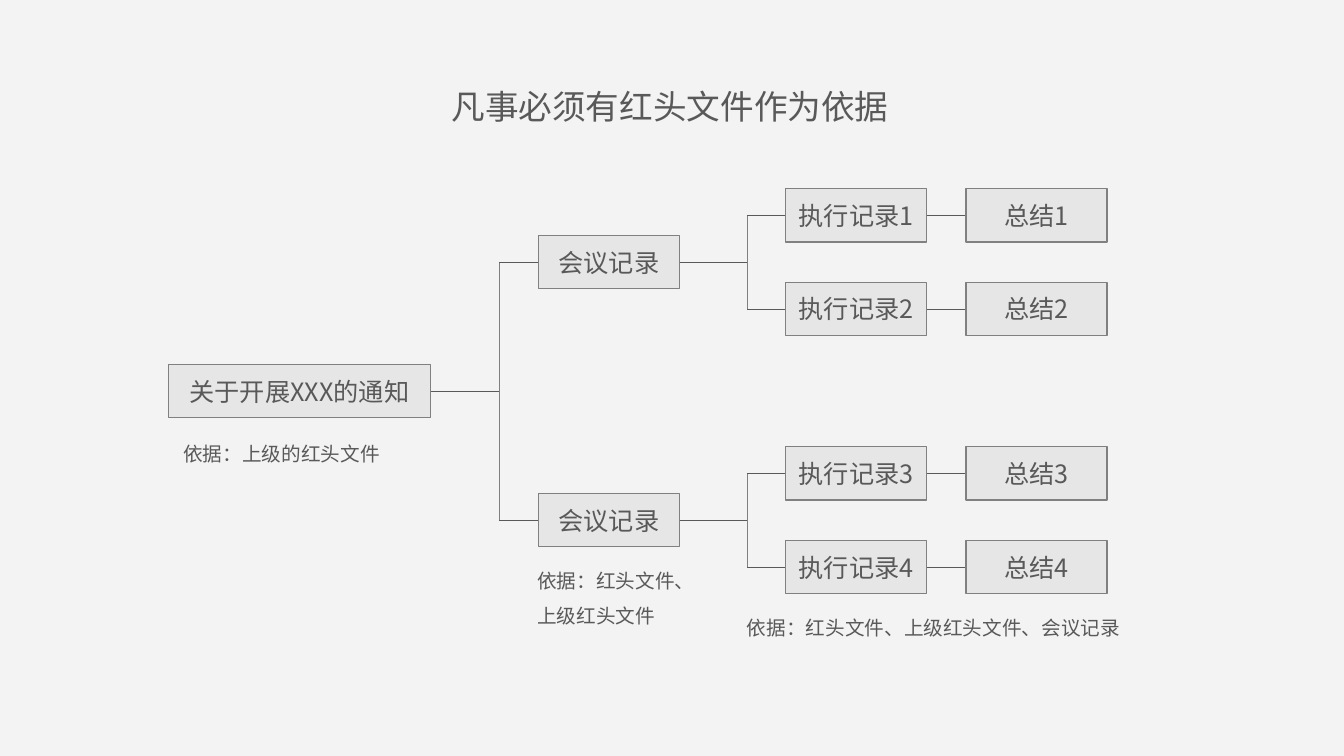
"""Build a slide with a document tree: notice, meetings, execution records, summaries."""
from lxml import etree
from pptx import Presentation
from pptx.dml.color import RGBColor
from pptx.enum.shapes import MSO_CONNECTOR, MSO_SHAPE
from pptx.enum.text import MSO_ANCHOR, PP_ALIGN
from pptx.oxml.ns import qn
from pptx.util import Inches, Pt

RECT, STRAIGHT = MSO_SHAPE.RECTANGLE, MSO_CONNECTOR.STRAIGHT
LEFT, CENTER, MIDDLE = PP_ALIGN.LEFT, PP_ALIGN.CENTER, MSO_ANCHOR.MIDDLE

THEME = {
    "font": "Noto Sans CJK SC",
    "title": 24, "box": 18, "note": 14,
    "bg": RGBColor.from_string("F3F3F3"),
    "fill": RGBColor.from_string("E7E6E6"),
    "border": RGBColor.from_string("808080"),
    "ink": RGBColor.from_string("595959"),
}

NOTICE_X, MEETING_X, RECORD_X, SUMMARY_X = 1.67, 5.34, 7.79, 9.58
TRUNK_X, BRANCH_X = 4.95, 7.41
NOTICE_W, BOX_W, BOX_H = 2.6, 1.4, 0.53
NOTICE_Y, MEETING_YS, SPREAD = 3.88, (2.6, 5.16), 0.465

prs = Presentation()
prs.slide_width, prs.slide_height = Inches(13.33), Inches(7.5)
s = prs.slides.add_slide(prs.slide_layouts[6])
s.background.fill.solid()
s.background.fill.fore_color.rgb = THEME["bg"]


def write(sp, text, size, align, spacing=1.0):
    tf = sp.text_frame
    tf.word_wrap = True
    p = tf.paragraphs[0]
    p.alignment, p.line_spacing = align, spacing
    r = p.add_run()
    r.text = text
    r.font.size = Pt(THEME[size])
    r.font.color.rgb = THEME["ink"]
    r.font.name = THEME["font"]
    etree.SubElement(r.font._element, qn("a:ea")).set("typeface", THEME["font"])


def line(x1, y1, x2, y2, color="ink"):
    c = s.shapes.add_connector(STRAIGHT, Inches(x1), Inches(y1), Inches(x2), Inches(y2))
    c.line.color.rgb = THEME[color]
    c.line.width = Pt(0.5)
    etree.SubElement(c._element.spPr, qn("a:effectLst"))


boxes = [("关于开展XXX的通知", NOTICE_X, NOTICE_Y, NOTICE_W)]
line(NOTICE_X + NOTICE_W, NOTICE_Y, TRUNK_X, NOTICE_Y)
line(TRUNK_X, MEETING_YS[0], TRUNK_X, MEETING_YS[1], "border")

for i, meeting_y in enumerate(MEETING_YS):
    boxes.append(("会议记录", MEETING_X, meeting_y, BOX_W))
    line(TRUNK_X, meeting_y, MEETING_X, meeting_y)
    line(MEETING_X + BOX_W, meeting_y, BRANCH_X, meeting_y)
    line(BRANCH_X, meeting_y - SPREAD, BRANCH_X, meeting_y + SPREAD, "border")
    for j, y in enumerate((meeting_y - SPREAD, meeting_y + SPREAD)):
        number = 2 * i + j + 1
        boxes.append((f"执行记录{number}", RECORD_X, y, BOX_W))
        boxes.append((f"总结{number}", SUMMARY_X, y, BOX_W))
        line(BRANCH_X, y, RECORD_X, y)
        line(RECORD_X + BOX_W, y, SUMMARY_X, y)

for text, x, y, w in boxes:
    sp = s.shapes.add_shape(RECT, Inches(x), Inches(y - BOX_H / 2), Inches(w), Inches(BOX_H))
    sp.shadow.inherit = False
    sp.fill.solid()
    sp.fill.fore_color.rgb = THEME["fill"]
    sp.line.color.rgb = THEME["border"]
    sp.line.width = Pt(1)
    sp.text_frame.vertical_anchor = MIDDLE
    sp.text_frame.margin_left = sp.text_frame.margin_right = Inches(0.05)
    write(sp, text, "box", CENTER)

for text, x, y, w, h, size, align, spacing in (
    ("凡事必须有红头文件作为依据", 4.27, 0.8, 4.75, 0.5, "title", CENTER, 1.0),
    ("依据：上级的红头文件", 1.72, 4.22, 2.23, 0.41, "note", LEFT, 1.5),
    ("依据：红头文件、上级红头文件", 5.23, 5.48, 1.59, 0.77, "note", LEFT, 1.5),
    ("依据：红头文件、上级红头文件、会议记录", 7.31, 5.94, 4.13, 0.41, "note", LEFT, 1.5),
):
    sp = s.shapes.add_textbox(Inches(x), Inches(y), Inches(w), Inches(h))
    write(sp, text, size, align, spacing)

prs.save("out.pptx")
